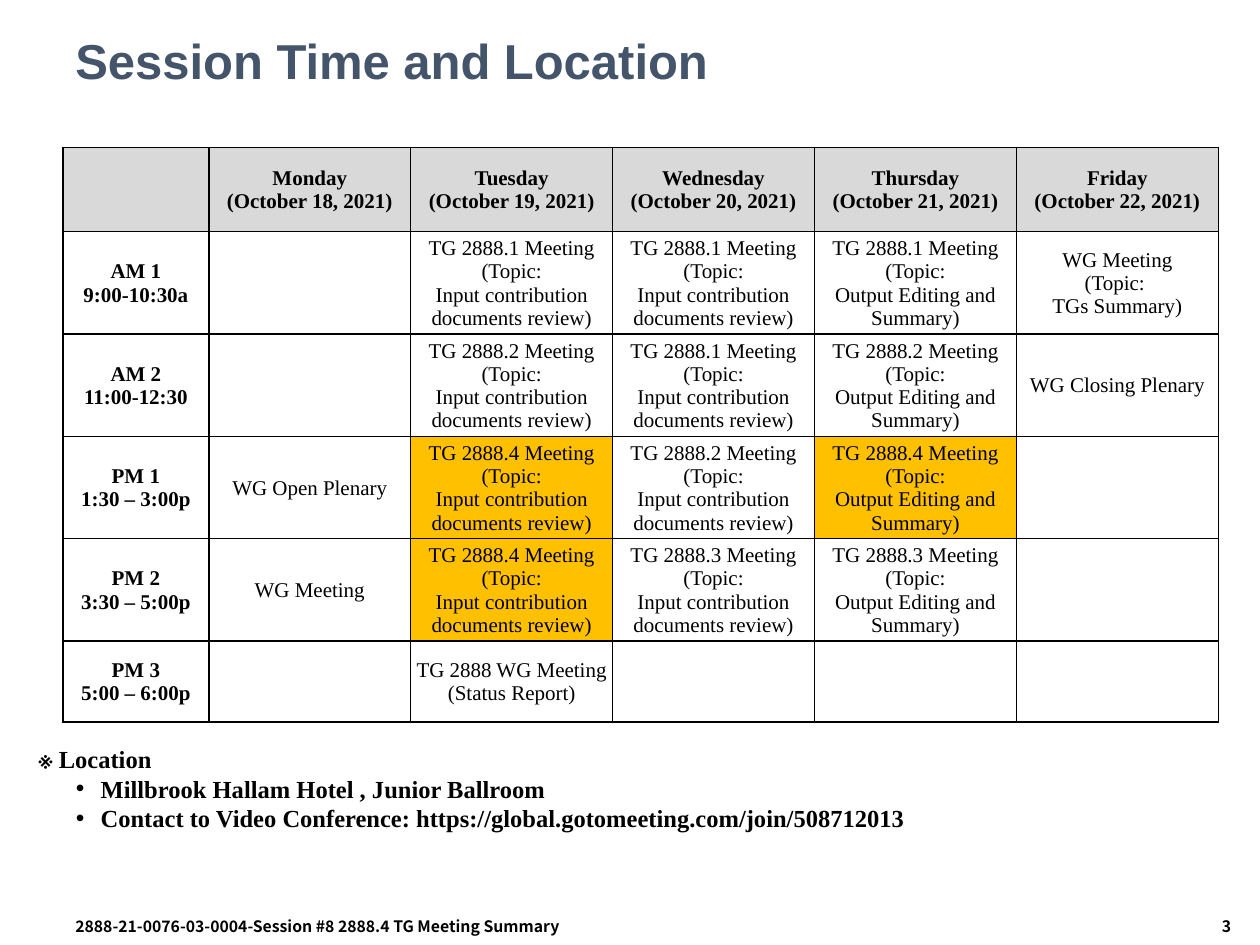
from dataclasses import dataclass

from lxml.etree import SubElement
from pptx import Presentation
from pptx.dml.color import RGBColor
from pptx.enum.text import MSO_ANCHOR, PP_ALIGN
from pptx.oxml.ns import qn
from pptx.util import Cm, Pt


@dataclass(frozen=True)
class Theme:
    title_font: str = "Arial"
    body_font: str = "Times New Roman"
    footer_font: str = "Noto Sans CJK KR"
    title_size: int = 28
    note_size: int = 14
    table_size: int = 12
    footer_size: int = 9
    title_color: str = "44546A"
    ink: str = "000000"
    header_fill: str = "D9D9D9"
    highlight: str = "FFC000"


class SlideBuilder:
    def __init__(self, slide, theme):
        self.slide = slide
        self.theme = theme

    def style(self, paragraph, font, size, bold=True, color=None):
        paragraph.font.name = font
        paragraph.font.size = Pt(size)
        paragraph.font.bold = bold
        paragraph.font.color.rgb = RGBColor.from_string(color or self.theme.ink)

    def text(self, box, content, font, size, color=None, align=PP_ALIGN.LEFT):
        shape = self.slide.shapes.add_textbox(*map(Cm, box))
        frame = shape.text_frame
        frame.word_wrap = True
        frame.text = content
        for paragraph in frame.paragraphs:
            paragraph.alignment = align
            self.style(paragraph, font, size, color=color)
        return frame

    def title(self, box, content):
        frame = self.text(box, content, self.theme.title_font,
                          self.theme.title_size, self.theme.title_color)
        frame.vertical_anchor = MSO_ANCHOR.MIDDLE
        frame.paragraphs[0].line_spacing = 0.9

    def footer(self, box, content, align=PP_ALIGN.LEFT):
        self.text(box, content, self.theme.footer_font,
                  self.theme.footer_size, align=align)

    def notes(self, box, heading, items):
        frame = self.text(box, heading, self.theme.body_font, self.theme.note_size)
        for item in items:
            paragraph = frame.add_paragraph()
            paragraph.text = item
            properties = paragraph._p.get_or_add_pPr()
            properties.set("marL", str(Cm(1.25)))
            properties.set("indent", str(Cm(-0.5)))
            SubElement(properties, qn("a:buFont"), typeface="Arial")
            SubElement(properties, qn("a:buChar"), char="•")
            self.style(paragraph, self.theme.body_font, self.theme.note_size)

    def borders(self, cell):
        properties = cell._tc.get_or_add_tcPr()
        for side in ("a:lnL", "a:lnR", "a:lnT", "a:lnB"):
            line = SubElement(properties, qn(side), w=str(Pt(1)))
            fill = SubElement(line, qn("a:solidFill"))
            SubElement(fill, qn("a:srgbClr"), val=self.theme.ink)

    def cell(self, cell, content, bold, fill):
        self.borders(cell)
        if fill:
            cell.fill.solid()
            cell.fill.fore_color.rgb = RGBColor.from_string(fill)
        else:
            cell.fill.background()
        cell.vertical_anchor = MSO_ANCHOR.MIDDLE
        cell.margin_left = cell.margin_right = cell.margin_top = Cm(0.03)
        cell.margin_bottom = 0
        cell.text = content
        for paragraph in cell.text_frame.paragraphs:
            paragraph.alignment = PP_ALIGN.CENTER
            self.style(paragraph, self.theme.body_font, self.theme.table_size, bold)

    def schedule(self, left, top, widths, heights, rows, highlight_text):
        frame = self.slide.shapes.add_table(
            len(rows), len(widths), Cm(left), Cm(top),
            Cm(sum(widths)), Cm(sum(heights)))
        table = frame.table
        for column, width in zip(table.columns, widths):
            column.width = Cm(width)
        for row, height in zip(table.rows, heights):
            row.height = Cm(height)
        for r, row in enumerate(rows):
            for c, content in enumerate(row):
                fill = None
                if r == 0:
                    fill = self.theme.header_fill
                elif highlight_text in content:
                    fill = self.theme.highlight
                self.cell(table.cell(r, c), content, r == 0 or c == 0, fill)


def review(group):
    return f"TG 2888.{group} Meeting\n(Topic:\vInput contribution documents review)"


def summary(group):
    return f"TG 2888.{group} Meeting\n(Topic:\vOutput Editing and Summary)"


def main():
    presentation = Presentation()
    presentation.slide_width = Cm(25.4)
    presentation.slide_height = Cm(19.05)
    slide = presentation.slides.add_slide(presentation.slide_layouts[6])
    builder = SlideBuilder(slide, Theme())

    # Title
    builder.title((1.27, 0.43, 22.86, 1.7), "Session Time and Location")

    # Week schedule
    days = ("Monday", "Tuesday", "Wednesday", "Thursday", "Friday")
    header = [""] + [f"{day}\n(October {date}, 2021)"
                     for date, day in enumerate(days, 18)]
    rows = [
        header,
        ["AM 1\n9:00-10:30a", "", review(1), review(1), summary(1),
         "WG Meeting\n(Topic: \vTGs Summary)"],
        ["AM 2\n11:00-12:30", "", review(2), review(1), summary(2),
         "WG Closing Plenary"],
        ["PM 1\n1:30 – 3:00p", "WG Open Plenary", review(4), review(2), summary(4), ""],
        ["PM 2\n3:30 – 5:00p", "WG Meeting", review(4), review(3), summary(3), ""],
        ["PM 3\n5:00 – 6:00p", "", "TG 2888 WG Meeting\n(Status Report)", "", "", ""],
    ]
    builder.schedule(1.27, 2.97, [2.94] + [4.07] * 5,
                     [1.7] + [1.92] * 4 + [1.63], rows, "2888.4")

    # Location
    builder.notes((0.53, 14.88, 24.31, 2.06), "※ Location", [
        "Millbrook Hallam Hotel , Junior Ballroom",
        "Contact to Video Conference: https://global.gotomeeting.com/join/508712013",
    ])

    # Footer
    builder.footer((1.27, 18.36, 15.44, 0.69),
                   "2888-21-0076-03-0004-Session #8 2888.4 TG Meeting Summary")
    builder.footer((20.96, 18.36, 4.11, 0.69), "3", PP_ALIGN.RIGHT)

    presentation.save("out.pptx")


if __name__ == "__main__":
    main()
